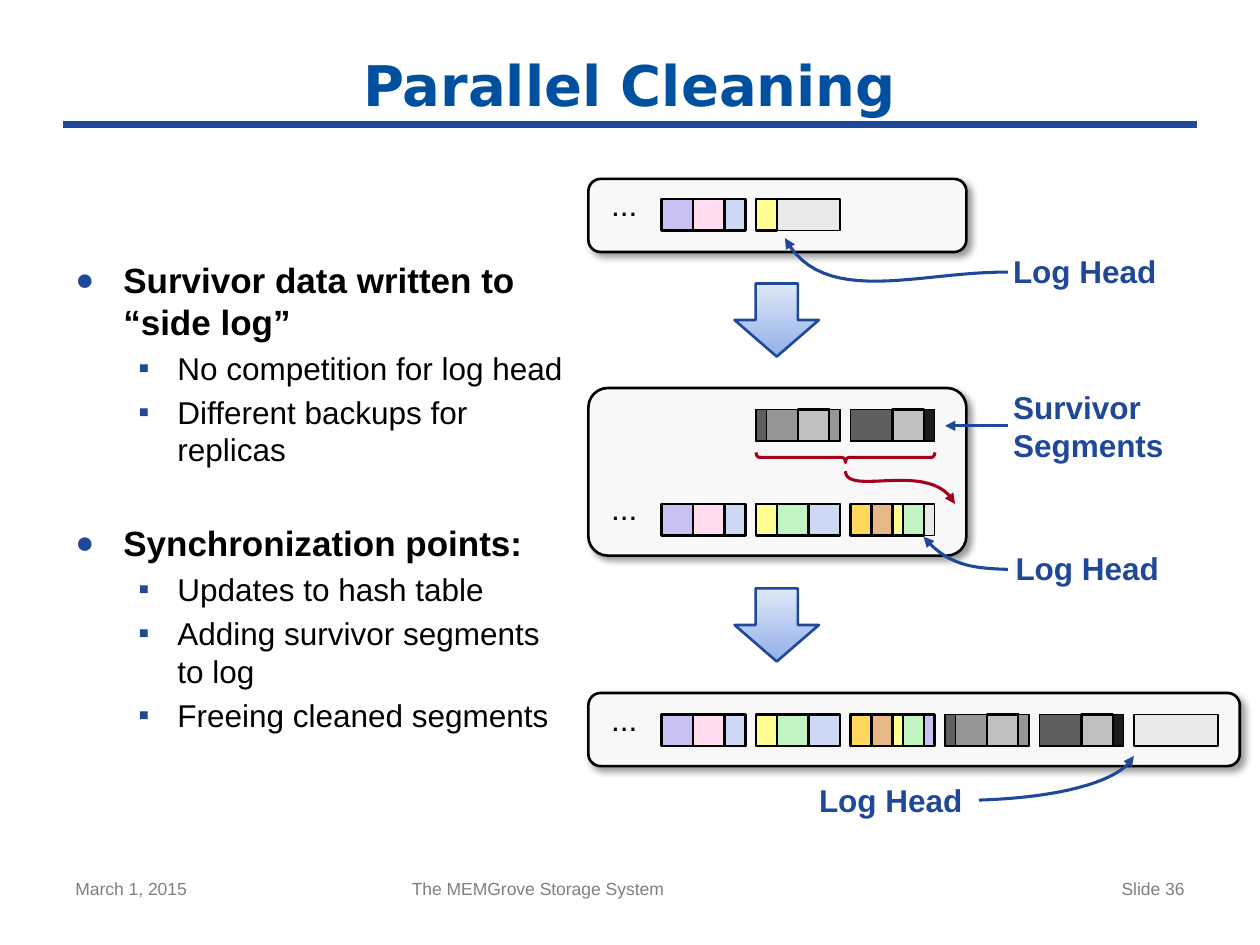
from lxml import etree
from pptx import Presentation
from pptx.dml.color import RGBColor
from pptx.enum.shapes import MSO_CONNECTOR, MSO_SHAPE
from pptx.enum.text import MSO_ANCHOR, PP_ALIGN
from pptx.oxml.ns import qn
from pptx.util import Inches, Pt

RECT, ROUNDED = MSO_SHAPE.RECTANGLE, MSO_SHAPE.ROUNDED_RECTANGLE
DOWN_ARROW, BRACE = MSO_SHAPE.DOWN_ARROW, MSO_SHAPE.LEFT_BRACE
STRAIGHT = MSO_CONNECTOR.STRAIGHT
LEFT, CENTER, RIGHT = PP_ALIGN.LEFT, PP_ALIGN.CENTER, PP_ALIGN.RIGHT
TOP, MIDDLE = MSO_ANCHOR.TOP, MSO_ANCHOR.MIDDLE

BLACK = RGBColor(0x00, 0x00, 0x00)
BLUE = RGBColor(0x1F, 0x48, 0x99)
TITLE_BLUE = RGBColor(0x00, 0x50, 0xA0)
FOOTER_GRAY = RGBColor(0x7F, 0x7F, 0x7F)
RED = RGBColor(0xA5, 0x00, 0x1E)
PANEL = RGBColor(0xF8, 0xF8, 0xF8)
FREE = RGBColor(0xEA, 0xEA, 0xEA)
ARROW_LIGHT = RGBColor(0xDE, 0xE7, 0xF8)
ARROW_DARK = RGBColor(0x93, 0xB0, 0xE9)
PURPLE = RGBColor(0xCB, 0xC0, 0xF2)
PINK = RGBColor(0xFF, 0xDD, 0xEE)
SKY = RGBColor(0xCC, 0xD8, 0xF4)
YELLOW = RGBColor(0xFF, 0xFF, 0x91)
GREEN = RGBColor(0xC2, 0xF4, 0xC2)
GOLD = RGBColor(0xFF, 0xD8, 0x5D)
TAN = RGBColor(0xE8, 0xB8, 0x88)
DARK = RGBColor(0x5F, 0x5F, 0x5F)
MID = RGBColor(0x96, 0x96, 0x96)
LIGHT = RGBColor(0xC0, 0xC0, 0xC0)
NEAR_BLACK = RGBColor(0x1C, 0x1C, 0x1C)
THIN_OUTLINE = (FREE, DARK, MID, NEAR_BLACK)

# Log contents: each segment is 8 units long, an entry is (colour, units)
UNIT = 1 / 12
SEGMENT_A = [(PURPLE, 3), (PINK, 3), (SKY, 2)]
SEGMENT_B = [(YELLOW, 2), (GREEN, 3), (SKY, 3)]
SEGMENT_C = [(GOLD, 2), (TAN, 2), (YELLOW, 1), (GREEN, 2)]
SURVIVORS = [[(DARK, 1), (MID, 3), (LIGHT, 3), (MID, 1)],
             [(DARK, 4), (LIGHT, 3), (NEAR_BLACK, 1)]]

BULLETS = {
    0: dict(char="●", indent=0.38, hang=0.38, percent=90, size=20, bold=True, before=6),
    1: dict(char="▪", indent=0.81, hang=0.31, percent=100, size=18, bold=False, before=3.6),
}


def apply(target, values):
    for name, value in values.items():
        setattr(target, name, value)


class Sketch:
    font = "Arial"

    def __init__(self, page):
        self.page = page

    def add_span(self, para, text, size, color, bold=False, font=None):
        span = para.add_run()
        span.text = text
        apply(span.font, dict(size=Pt(size), bold=bold, name=font or self.font))
        span.font.color.rgb = color

    def text(self, place, lines, size, color, bold=False, font=None,
             align=LEFT, anchor=TOP, wrap=True, inset=None):
        box = self.page.shapes.add_textbox(*map(Inches, place))
        frame = box.text_frame
        apply(frame, dict(word_wrap=wrap, vertical_anchor=anchor))
        if inset is not None:
            sides = ("margin_left", "margin_top", "margin_right", "margin_bottom")
            apply(frame, dict.fromkeys(sides, Inches(inset)))
        for index, line in enumerate(lines):
            para = frame.add_paragraph() if index else frame.paragraphs[0]
            para.alignment = align
            self.add_span(para, line, size, color, bold, font)

    def label(self, place, *lines):
        self.text(place, lines, 18, BLUE, bold=True, wrap=False, inset=0)

    def bullets(self, place, items):
        box = self.page.shapes.add_textbox(*map(Inches, place))
        frame = box.text_frame
        frame.word_wrap = True
        for index, (level, text, extra) in enumerate(items):
            style = BULLETS[level]
            para = frame.add_paragraph() if index else frame.paragraphs[0]
            apply(para, dict(level=level, space_before=Pt(style["before"] + extra)))
            props = para._p.get_or_add_pPr()
            props.set("marL", str(Inches(style["indent"])))
            props.set("indent", str(-Inches(style["hang"])))
            color = etree.SubElement(props, qn("a:buClr"))
            etree.SubElement(color, qn("a:srgbClr"), val=str(BLUE))
            etree.SubElement(props, qn("a:buSzPct"), val=str(style["percent"] * 1000))
            etree.SubElement(props, qn("a:buFont"), typeface=self.font)
            etree.SubElement(props, qn("a:buChar"), char=style["char"])
            self.add_span(para, text, style["size"], BLACK, style["bold"])

    def shape(self, kind, place, fill=None, line=BLACK, width=1.5):
        shape = self.page.shapes.add_shape(kind, *map(Inches, place))
        shape.shadow.inherit = False
        if fill is None:
            shape.fill.background()
        else:
            shape.fill.solid()
            shape.fill.fore_color.rgb = fill
        shape.line.color.rgb = line
        shape.line.width = Pt(width)
        return shape

    def panel(self, place, corner=0.167):
        panel = self.shape(ROUNDED, place, PANEL)
        panel.adjustments[0] = corner
        effects = panel.element.spPr.find(qn("a:effectLst"))
        shadow = etree.SubElement(effects, qn("a:outerShdw"), blurRad=str(Pt(4)),
                                  dist=str(Pt(3)), dir="2700000", algn="tl", rotWithShape="0")
        color = etree.SubElement(shadow, qn("a:srgbClr"), val=str(BLACK))
        etree.SubElement(color, qn("a:alpha"), val="40000")

    def log(self, left, top, segments):
        for index, entries in enumerate(segments):
            start = left + index * 9 * UNIT
            self.shape(RECT, (start, top, 8 * UNIT, 0.25), FREE, width=1)
            for color, units in entries:
                self.shape(RECT, (start, top, units * UNIT, 0.25), color,
                           width=1 if color in THIN_OUTLINE else 1.5)
                start += units * UNIT

    def ellipsis(self, top):
        self.text((4.75, top, 0.41, 0.4), ["..."], 18, BLACK, align=CENTER, wrap=False)

    def step_arrow(self, top):
        arrow = self.shape(DOWN_ARROW, (5.83, top, 0.67, 0.58), ARROW_LIGHT, BLUE)
        arrow.fill.gradient()
        arrow.fill.gradient_angle = 270
        for stop, color, position in zip(arrow.fill.gradient_stops,
                                         (ARROW_LIGHT, ARROW_DARK), (0, 1)):
            stop.color.rgb = color
            stop.position = position

    def arrowhead(self, shape):
        outline = shape.element.spPr.find(qn("a:ln"))
        etree.SubElement(outline, qn("a:tailEnd"), type="triangle")

    def line(self, start, end, width, head=False):
        line = self.page.shapes.add_connector(STRAIGHT, *map(Inches, start + end))
        line.line.color.rgb = BLUE
        line.line.width = Pt(width)
        etree.SubElement(line.element.spPr, qn("a:effectLst"))
        if head:
            self.arrowhead(line)

    def curve(self, start, control_1, control_2, end, color=BLUE, steps=24):
        points = []
        for step in range(steps + 1):
            t = step / steps
            weights = ((1 - t) ** 3, 3 * t * (1 - t) ** 2, 3 * t * t * (1 - t), t ** 3)
            points.append(tuple(
                Inches(sum(weight * value for weight, value in zip(weights, axis)))
                for axis in zip(start, control_1, control_2, end)))
        builder = self.page.shapes.build_freeform(*points[0])
        builder.add_line_segments(points[1:], close=False)
        curve = builder.convert_to_shape()
        curve.shadow.inherit = False
        curve.fill.background()
        curve.line.color.rgb = color
        curve.line.width = Pt(1.75)
        self.arrowhead(curve)


def main():
    deck = Presentation()
    deck.slide_width, deck.slide_height = Inches(10), Inches(7.5)
    sketch = Sketch(deck.slides.add_slide(deck.slide_layouts[6]))

    # Title and footer
    sketch.line((0.5, 0.99), (9.5, 0.99), 4)
    sketch.text((0.5, 0.33, 9, 0.67), ["Parallel Cleaning"], 32, TITLE_BLUE, bold=True,
                font="DejaVu Sans", align=CENTER, anchor=MIDDLE)
    for left, width, words, align in ((0.5, 2.33, "March 1, 2015", LEFT),
                                      (3.17, 3.75, "The MEMGrove Storage System", LEFT),
                                      (7.17, 2.33, "Slide 36", RIGHT)):
        sketch.text((left, 6.92, width, 0.43), [words], 10, FOOTER_GRAY, align=align)

    # Bullet list: level, text, extra space before
    sketch.bullets((0.5, 2, 4.08, 5.08), [
        (0, "Survivor data written to “side log”", 0),
        (1, "No competition for log head", 0),
        (1, "Different backups for replicas", 0),
        (0, "Synchronization points:", 24.5),
        (1, "Updates to hash table", 0),
        (1, "Adding survivor segments to log", 0),
        (1, "Freeing cleaned segments", 0),
    ])

    # Log before cleaning
    sketch.panel((4.67, 1.42, 3, 0.58))
    sketch.log(5.25, 1.58, [SEGMENT_A, [(YELLOW, 2)]])
    sketch.ellipsis(1.42)
    sketch.label((8.04, 2, 1.15, 0.3), "Log Head")
    sketch.curve((8, 2.16), (7.31, 2.15), (6.53, 2.45), (6.23, 1.89))
    sketch.step_arrow(2.25)

    # Survivor segments beside the log
    sketch.panel((4.67, 3.08, 3, 1.33), 0.116)
    sketch.log(6, 3.25, SURVIVORS)
    sketch.log(5.25, 4, [SEGMENT_A, SEGMENT_B, SEGMENT_C])
    sketch.ellipsis(3.83)
    sketch.label((8.06, 4.36, 1.15, 0.3), "Log Head")
    sketch.curve((8, 4.52), (7.74, 4.51), (7.53, 4.5), (7.33, 4.26))
    sketch.label((8.04, 3.08, 1.21, 0.61), "Survivor", "Segments")
    sketch.line((8, 3.38), (7.5, 3.38), 1.75, head=True)
    brace = sketch.shape(BRACE, (6.67, 2.92, 0.08, 1.42), line=RED, width=1.75)
    brace.rotation = 270
    brace.adjustments[0] = 0.338
    sketch.curve((6.71, 3.74), (6.72, 3.95), (7.4, 3.64), (7.58, 4), RED)
    sketch.step_arrow(4.67)

    # Log after the survivors are added
    sketch.panel((4.67, 5.5, 5.17, 0.58))
    sketch.log(5.25, 5.67, [SEGMENT_A, SEGMENT_B, SEGMENT_C + [(PURPLE, 1)], *SURVIVORS, []])
    sketch.ellipsis(5.51)
    sketch.label((6.5, 6.2, 1.15, 0.3), "Log Head")
    sketch.curve((7.77, 6.35), (8.42, 6.33), (8.9, 6.2), (9, 6))

    deck.save("out.pptx")


if __name__ == "__main__":
    main()
